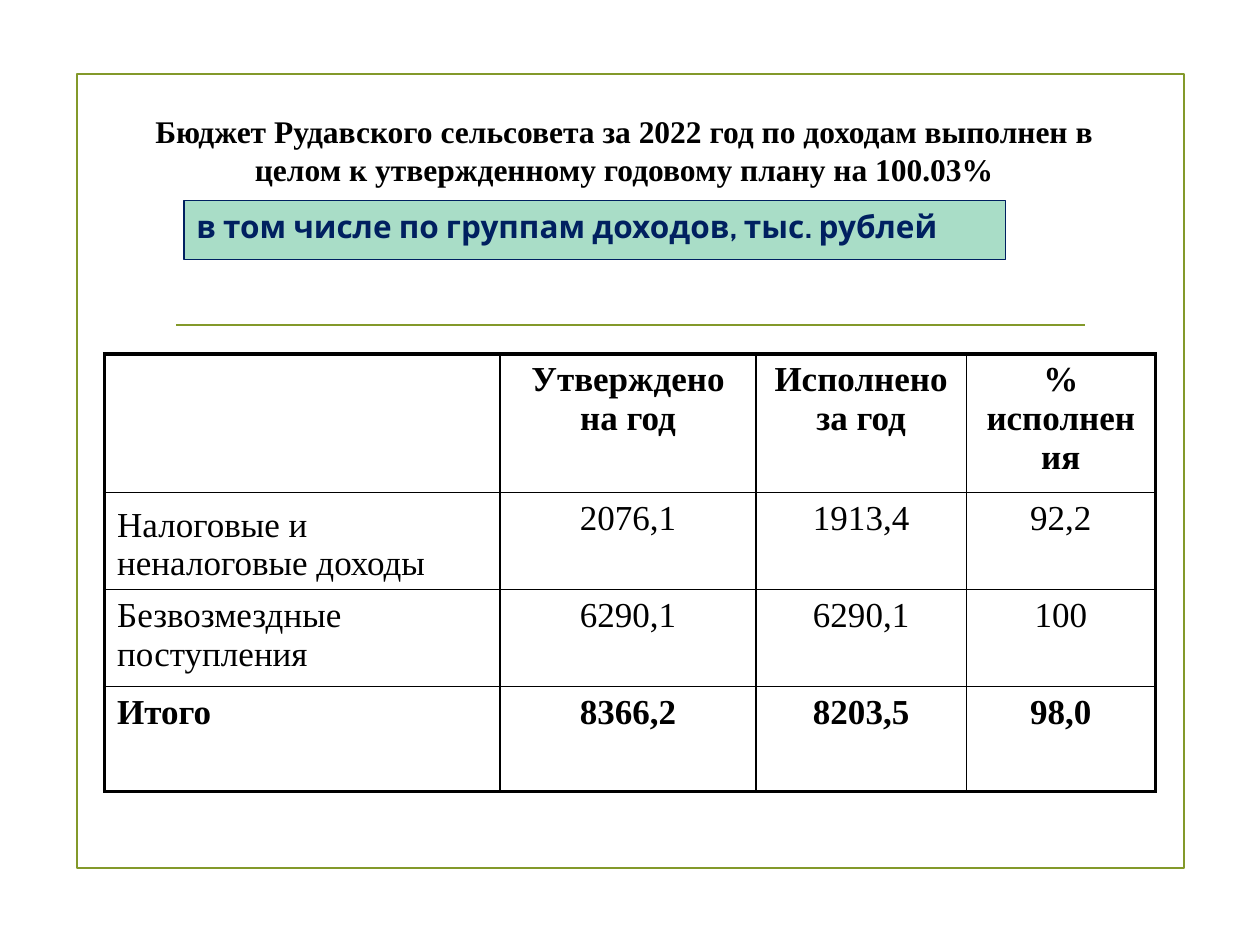
from dataclasses import dataclass
from typing import Any

import pptx
import pptx.dml.color
import pptx.enum.shapes
import pptx.enum.text
import pptx.oxml.ns
import pptx.util
from lxml import etree

Inches = pptx.util.Inches
Pt = pptx.util.Pt
Align = pptx.enum.text.PP_ALIGN
Anchor = pptx.enum.text.MSO_ANCHOR

OLIVE = "83992A"
NAVY = "002060"
MINT = "A9DDC7"
BLACK = "000000"
SERIF = "Times New Roman"


@dataclass
class Style:
    size: float
    font: str = SERIF
    tint: str = BLACK
    bold: bool = True


@dataclass
class Row:
    height: float
    cells: tuple[str, ...]
    bold: bool = False
    low: bool = False


COLS = (3.14, 2.03, 1.67, 1.5)
ROWS = (
    Row(1.1, ("", "Утверждено на год", "Исполнено за год", "% исполнения"), bold=True),
    Row(0.77, ("Налоговые и неналоговые доходы", "2076,1", "1913,4", "92,2"), low=True),
    Row(0.77, ("Безвозмездные поступления", "6290,1", "6290,1", "100")),
    Row(0.83, ("Итого", "8366,2", "8203,5", "98,0"), bold=True),
)


def color(code: str) -> pptx.dml.color.RGBColor:
    return pptx.dml.color.RGBColor.from_string(code)


def write(frame: Any, text: str, style: Style, align: Any) -> None:
    frame.word_wrap = True
    para = frame.paragraphs[0]
    para.alignment = align
    run = para.add_run()
    run.text = text
    run.font.name = style.font
    run.font.size = Pt(style.size)
    run.font.bold = style.bold
    run.font.color.rgb = color(style.tint)


def stroke(line: Any, code: str, width: float) -> None:
    line.color.rgb = color(code)
    line.width = Pt(width)


def add_box(slide: Any, left: float, top: float, width: float, height: float,
            edge: str, weight: float, fill: str | None = None) -> Any:
    box = slide.shapes.add_shape(
        pptx.enum.shapes.MSO_SHAPE.RECTANGLE,
        Inches(left), Inches(top), Inches(width), Inches(height))
    box.shadow.inherit = False
    if fill:
        box.fill.solid()
        box.fill.fore_color.rgb = color(fill)
    else:
        box.fill.background()
    stroke(box.line, edge, weight)
    return box


def add_rule(slide: Any, left: float, right: float, top: float) -> None:
    rule = slide.shapes.add_connector(
        pptx.enum.shapes.MSO_CONNECTOR.STRAIGHT,
        Inches(left), Inches(top), Inches(right), Inches(top))
    stroke(rule.line, OLIVE, 1.25)
    etree.SubElement(rule._element.spPr, pptx.oxml.ns.qn("a:effectLst"))


def set_edges(cell: Any, row: int, col: int) -> None:
    """Draw thick lines on the rim of the table and thin ones inside."""
    qn = pptx.oxml.ns.qn
    props = cell._tc.get_or_add_tcPr()
    rim = {"L": col == 0, "R": col == len(COLS) - 1,
           "T": row == 0, "B": row == len(ROWS) - 1}
    for side, thick in rim.items():
        width = Pt(2.25 if thick else 1)
        line = etree.SubElement(props, qn(f"a:ln{side}"), w=str(int(width)))
        fill = etree.SubElement(line, qn("a:solidFill"))
        etree.SubElement(fill, qn("a:srgbClr"), val=BLACK)


def add_grid(slide: Any, left: float, top: float) -> None:
    table = slide.shapes.add_table(
        len(ROWS), len(COLS), Inches(left), Inches(top),
        Inches(sum(COLS)), Inches(sum(row.height for row in ROWS))).table
    table.first_row = table.horz_banding = False
    for col, width in enumerate(COLS):
        table.columns[col].width = Inches(width)
    for r, row in enumerate(ROWS):
        table.rows[r].height = Inches(row.height)
        for c, text in enumerate(row.cells):
            cell = table.cell(r, c)
            set_edges(cell, r, c)
            cell.fill.background()
            if row.low and c == 0:
                cell.vertical_anchor = Anchor.BOTTOM
            if text:
                write(cell.text_frame, text, Style(20, bold=row.bold),
                      Align.CENTER if c else Align.LEFT)


def main() -> None:
    deck = pptx.Presentation()
    deck.slide_width = Inches(10)
    deck.slide_height = Inches(7.5)
    slide = deck.slides.add_slide(deck.slide_layouts[6])

    add_box(slide, 0.61, 0.59, 8.79, 6.3, OLIVE, 1.25)
    add_rule(slide, 1.4, 8.61, 2.58)

    title = slide.shapes.add_textbox(Inches(0.98), Inches(0.84), Inches(7.95), Inches(0.71))
    write(title.text_frame,
          "Бюджет Рудавского сельсовета за 2022 год по доходам выполнен в целом "
          "к утвержденному годовому плану на 100.03%", Style(18), Align.CENTER)

    label = add_box(slide, 1.46, 1.59, 6.52, 0.47, NAVY, 0.75, MINT)
    label.text_frame.vertical_anchor = Anchor.TOP
    write(label.text_frame, "в том числе по группам доходов, тыс. рублей",
          Style(18, "Cabin", NAVY), Align.LEFT)

    add_grid(slide, 0.83, 2.81)
    deck.save("out.pptx")


if __name__ == "__main__":
    main()
